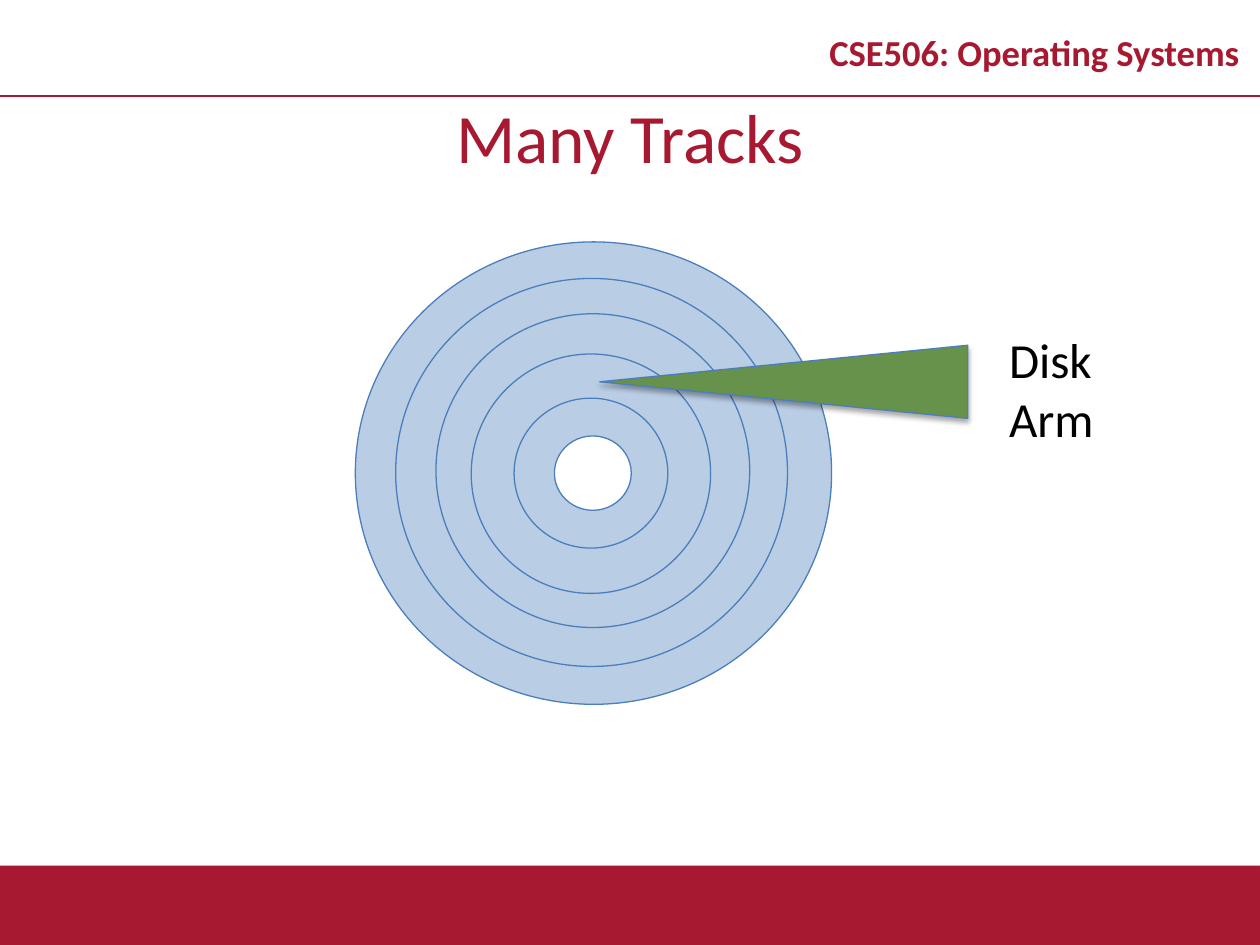
import lxml.etree
import pptx
import pptx.dml.color
import pptx.enum.shapes
import pptx.enum.text
import pptx.oxml.ns
import pptx.util

Inches = pptx.util.Inches
Pt = pptx.util.Pt
SHAPE = pptx.enum.shapes.MSO_SHAPE
ALIGN = pptx.enum.text.PP_ALIGN
ANCHOR = pptx.enum.text.MSO_ANCHOR
AUTO = pptx.enum.text.MSO_AUTO_SIZE

COLORS = {"crimson": "A71930", "disk": "B9CDE5", "outline": "4B7EBC",
          "arm": "67924B", "white": "FFFFFF", "black": "000000"}
TRACKS = [(2.82, 1.92, 3.78, 3.67), (3.14, 2.21, 3.11, 3.08),
          (3.46, 2.49, 2.49, 2.49), (3.74, 2.81, 1.9, 1.9),
          (4.08, 3.16, 1.22, 1.19)]
HUB = (4.4, 3.46, 0.61, 0.59)


def rgb(name):
    return pptx.dml.color.RGBColor.from_string(COLORS[name])


def set_attrs(obj, values):
    for name, value in values.items():
        setattr(obj, name, value)


def add_child(parent, tag, **attrs):
    return lxml.etree.SubElement(parent, pptx.oxml.ns.qn(tag), attrs)


def add_shadow(sp):
    effects = sp._element.spPr.find(pptx.oxml.ns.qn("a:effectLst"))
    shadow = add_child(effects, "a:outerShdw", blurRad=str(Pt(3.1)),
                       dist=str(Pt(1.8)), dir="5400000", rotWithShape="0")
    color = add_child(shadow, "a:srgbClr", val=COLORS["black"])
    add_child(color, "a:alpha", val="35000")


def add_shape(s, kind, box, fill, line=None, rotation=0, shadow=False):
    sp = s.shapes.add_shape(kind, *map(Inches, box))
    sp.rotation = rotation
    sp.fill.solid()
    sp.fill.fore_color.rgb = rgb(fill)
    if line:
        sp.line.color.rgb = rgb(line)
        sp.line.width = Pt(0.75)
    else:
        sp.line.fill.background()
    sp.shadow.inherit = False
    if shadow:
        add_shadow(sp)


def add_rule(s, y):
    line = s.shapes.add_connector(pptx.enum.shapes.MSO_CONNECTOR.STRAIGHT,
                                  Inches(0), Inches(y), Inches(10), Inches(y))
    line.line.color.rgb = rgb("crimson")
    line.line.width = Pt(1)
    add_child(line._element.spPr, "a:effectLst")


def write_text(sp, box, lines, size, color, frame, para, bold=False):
    set_attrs(sp, dict(zip(("left", "top", "width", "height"), map(Inches, box))))
    tf = sp.text_frame
    set_attrs(tf, frame)
    for i, text in enumerate(lines):
        p = tf.add_paragraph() if i else tf.paragraphs[0]
        set_attrs(p, para)
        r = p.add_run()
        r.text = text
        set_attrs(r.font, {"name": "Calibri", "size": Pt(size), "bold": bold})
        r.font.color.rgb = rgb(color)


def add_text(s, box, *args, **kwargs):
    sp = s.shapes.add_textbox(*map(Inches, box))
    write_text(sp, box, *args, **kwargs)


def main():
    prs = pptx.Presentation()
    set_attrs(prs, {"slide_width": Inches(10), "slide_height": Inches(7.5)})
    s = prs.slides.add_slide(prs.slide_layouts[5])
    middle = {"word_wrap": True, "auto_size": AUTO.NONE,
              "vertical_anchor": ANCHOR.MIDDLE}

    add_shape(s, SHAPE.RECTANGLE, (0, 6.87, 10, 0.63), "crimson", shadow=True)
    add_rule(s, 0.76)
    add_text(s, (6.42, 0.13, 3.58, 0.63), ["CSE506: Operating Systems"], 20.9,
             "crimson", middle, {"alignment": ALIGN.CENTER, "line_spacing": 0.8},
             bold=True)
    write_text(s.shapes.title, (0, 0.76, 10, 0.63), ["Many Tracks"], 39.6,
               "crimson", middle, {"alignment": ALIGN.CENTER})

    for box in TRACKS:
        add_shape(s, SHAPE.OVAL, box, "disk", "outline")
    add_shape(s, SHAPE.OVAL, HUB, "white", "outline")
    add_shape(s, SHAPE.ISOSCELES_TRIANGLE, (5.93, 1.57, 0.58, 2.92), "arm",
              "outline", rotation=270, shadow=True)
    add_text(s, (7.91, 2.57, 0.88, 1.04), ["Disk", "Arm"], 28, "black",
             {"word_wrap": False, "auto_size": AUTO.SHAPE_TO_FIT_TEXT},
             {"alignment": ALIGN.LEFT})
    prs.save("out.pptx")


if __name__ == "__main__":
    main()
